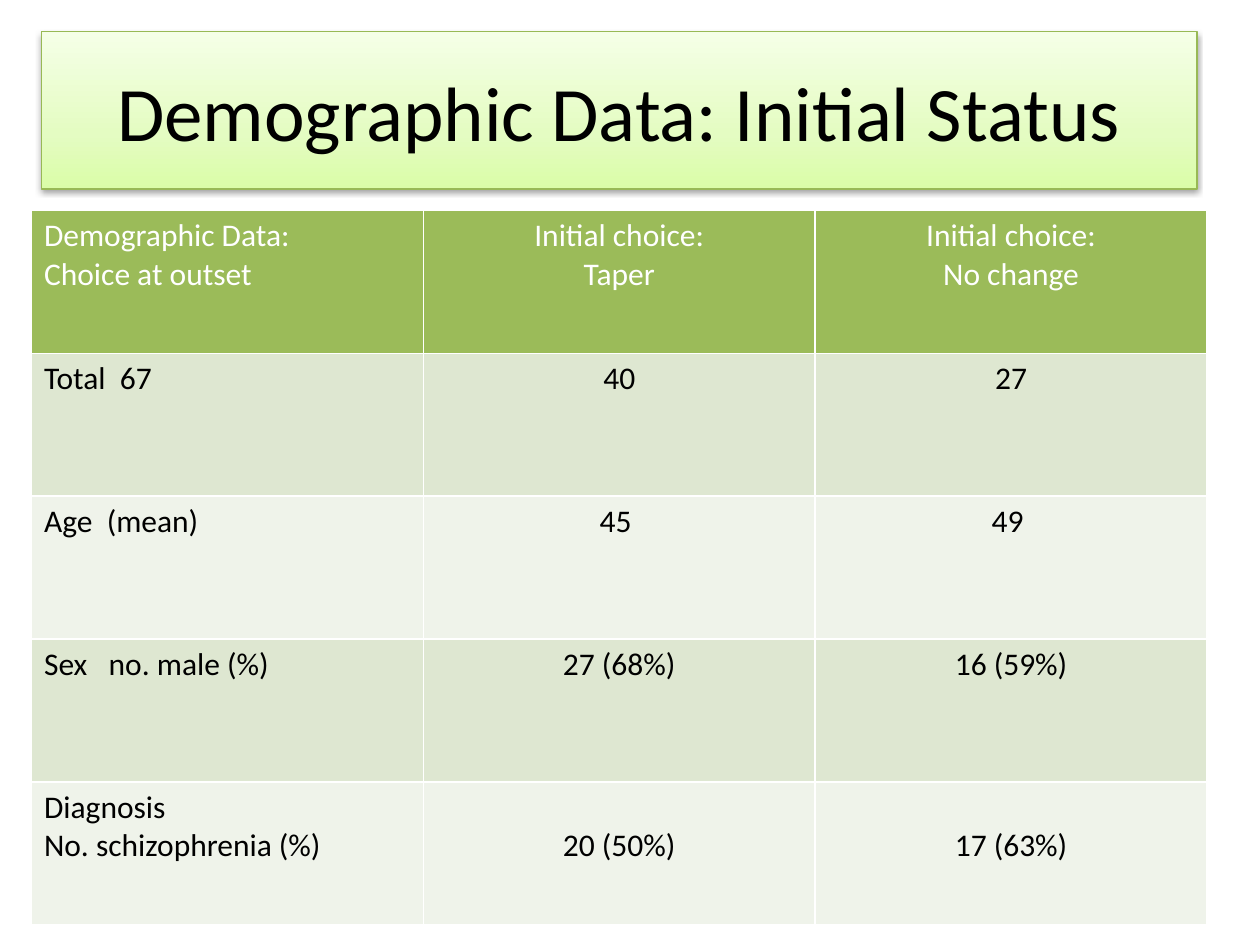
import pptx
import pptx.util
import pptx.dml.color
import pptx.enum.shapes
import pptx.enum.text
import pptx.oxml
import pptx.oxml.ns

Inches = pptx.util.Inches
Pt = pptx.util.Pt
RGBColor = pptx.dml.color.RGBColor
Align = pptx.enum.text.PP_ALIGN

TITLE = "Demographic Data: Initial Status"
ROWS = [
    ("Demographic Data:\nChoice at outset", "Initial choice:\nTaper", "Initial choice:\nNo change"),
    ("Total  67", "40", "27"),
    ("Age  (mean)", "45 ", "49 "),
    ("Sex   no. male (%)", "27 (68%)", "16 (59%)"),
    ("Diagnosis\nNo. schizophrenia (%)", "20 (50%)", "17 (63%)"),
]

FONT = "Calibri"
BLACK = RGBColor(0x00, 0x00, 0x00)
WHITE = RGBColor(0xFF, 0xFF, 0xFF)
HEADER_GREEN = RGBColor(0x9B, 0xBB, 0x59)
BAND_GREENS = [RGBColor(0xEF, 0xF3, 0xEA), RGBColor(0xDE, 0xE7, 0xD1)]
TITLE_LINE = RGBColor(0x98, 0xB9, 0x55)
TITLE_STOPS = [
    (0, RGBColor(0xDA, 0xFD, 0xA7)),
    (35, RGBColor(0xE4, 0xFC, 0xC2)),
    (100, RGBColor(0xF5, 0xFF, 0xE7)),
]

NAMESPACE = pptx.oxml.ns.nsdecls("a")
TITLE_AREA = (0.33, 0.25, 9.17, 1.25)
TABLE_AREA = (0.25, 1.67, 9.33, 5.67)
LINE_HEIGHT = 0.3
CELL_MARGIN = 0.05


def style_text(frame, size, color, align):
    for para in frame.paragraphs:
        para.alignment = align
        para.font.name = FONT
        para.font.size = Pt(size)
        para.font.color.rgb = color


def add_title(page):
    box = page.shapes.add_shape(
        pptx.enum.shapes.MSO_SHAPE.RECTANGLE, *map(Inches, TITLE_AREA))
    box.line.color.rgb = TITLE_LINE
    box.line.width = Pt(0.75)
    box.fill.gradient()
    box.fill.gradient_angle = 90
    stops = box.element.spPr.find(".//" + pptx.oxml.ns.qn("a:gsLst"))
    for stop in list(stops):
        stops.remove(stop)
    for position, color in TITLE_STOPS:
        stops.append(pptx.oxml.parse_xml(
            f'<a:gs {NAMESPACE} pos="{position * 1000}"><a:srgbClr val="{color}"/></a:gs>'))
    box.element.spPr.append(pptx.oxml.parse_xml(
        f'<a:effectLst {NAMESPACE}><a:outerShdw blurRad="{Pt(3.1)}" dist="{Pt(1.6)}" '
        'dir="5400000" rotWithShape="0"><a:srgbClr val="000000"><a:alpha val="38000"/>'
        '</a:srgbClr></a:outerShdw></a:effectLst>'))
    frame = box.text_frame
    frame.word_wrap = True
    frame.vertical_anchor = pptx.enum.text.MSO_ANCHOR.MIDDLE
    frame.text = TITLE
    style_text(frame, 44, BLACK, Align.CENTER)


def add_borders(cell):
    properties = cell._tc.get_or_add_tcPr()
    for index, side in enumerate(("lnL", "lnR", "lnT", "lnB")):
        properties.insert(index, pptx.oxml.parse_xml(
            f'<a:{side} {NAMESPACE} w="{Pt(1)}"><a:solidFill>'
            f'<a:srgbClr val="{WHITE}"/></a:solidFill></a:{side}>'))


def add_data_table(page):
    left, top, width, height = map(Inches, TABLE_AREA)
    table = page.shapes.add_table(
        len(ROWS), len(ROWS[0]), left, top, width, height).table
    for row_index, texts in enumerate(ROWS):
        is_header = row_index == 0
        label_lines = texts[0].count("\n")
        for column_index, text in enumerate(texts):
            cell = table.cell(row_index, column_index)
            cell.text = text
            cell.fill.solid()
            cell.fill.fore_color.rgb = HEADER_GREEN if is_header else BAND_GREENS[row_index % 2]
            missing_lines = label_lines - text.count("\n")
            cell.margin_top = Inches(CELL_MARGIN + missing_lines * LINE_HEIGHT)
            style_text(cell.text_frame, 18, WHITE if is_header else BLACK,
                       Align.CENTER if column_index else Align.LEFT)
            for para in cell.text_frame.paragraphs:
                para.font.bold = False
            add_borders(cell)


def main():
    deck = pptx.Presentation()
    deck.slide_width = Inches(10)
    deck.slide_height = Inches(7.5)
    page = deck.slides.add_slide(deck.slide_layouts[6])
    add_title(page)
    add_data_table(page)
    deck.save("out.pptx")


if __name__ == "__main__":
    main()
